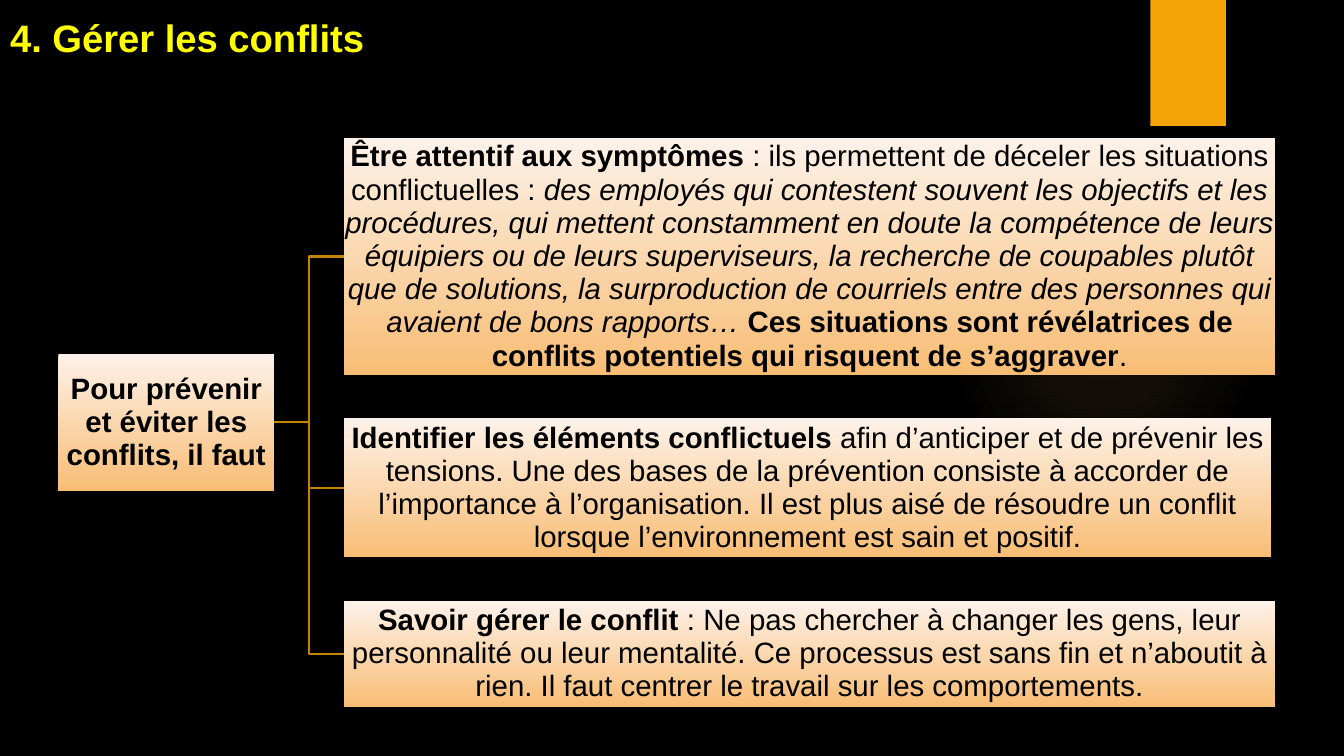
import pptx
import pptx.dml.color
import pptx.enum.shapes
import pptx.enum.text
import pptx.oxml
import pptx.oxml.ns
import pptx.util

RGBColor = pptx.dml.color.RGBColor
Inches = pptx.util.Inches
Pt = pptx.util.Pt
Preset = pptx.enum.shapes.MSO_SHAPE
Align = pptx.enum.text.PP_ALIGN
Anchor = pptx.enum.text.MSO_ANCHOR

BLACK = RGBColor(0x00, 0x00, 0x00)
YELLOW = RGBColor(0xFF, 0xFF, 0x00)
ORANGE = RGBColor(0xF5, 0xA4, 0x08)
LINE = RGBColor(0xC4, 0x83, 0x06)
CREAM = RGBColor(0xFD, 0xF2, 0xE9)
APRICOT = RGBColor(0xF8, 0xBD, 0x75)
GLOW = RGBColor(0xFA, 0xC9, 0x6A)

# Each span is (text, style): "b" bold, "i" italic, "" plain.
TITLE = "4. Gérer les conflits"
ROOT = [("Pour prévenir et éviter les conflits, il faut", "b")]
# (width, height, spans) of each advice, from top to bottom
ADVICE = [
    (9.24, 2.35, [
        ("Être attentif aux symptômes", "b"),
        (" : ils permettent de déceler les situations conflictuelles : ", ""),
        ("des employés qui contestent souvent les objectifs et les procédures, "
         "qui mettent constamment en doute la compétence de leurs équipiers ou "
         "de leurs superviseurs, la recherche de coupables plutôt que de "
         "solutions, la surproduction de courriels entre des personnes qui "
         "avaient de bons rapports… ", "i"),
        ("Ces situations sont révélatrices de conflits potentiels qui risquent "
         "de s’aggraver", "b"),
        (".", ""),
    ]),
    (9.2, 1.38, [
        ("Identifier les éléments conflictuels", "b"),
        (" afin d’anticiper et de prévenir les tensions. Une des bases de la "
         "prévention consiste à accorder de l’importance à l’organisation. Il "
         "est plus aisé de résoudre un conflit lorsque l’environnement est sain "
         "et positif.", ""),
    ]),
    (9.24, 1.05, [
        ("Savoir gérer le conflit ", "b"),
        (": Ne pas chercher à changer les gens, leur personnalité ou leur "
         "mentalité. Ce processus est sans fin et n’aboutit à rien. Il faut "
         "centrer le travail sur les comportements.", ""),
    ]),
]

ROOT_LEFT, ROOT_WIDTH, ROOT_HEIGHT = 0.58, 2.14, 1.36
ADVICE_LEFT, ADVICE_TOP, ADVICE_GAP = 3.41, 1.37, 0.43
GLOW_STOPS = [(0, 7), (36, 6), (69, 0)]  # position and opacity, in percent


def add_shape(page, preset, left, top, width, height):
    shape = page.shapes.add_shape(
        preset, Inches(left), Inches(top), Inches(width), Inches(height))
    shape.shadow.inherit = False
    shape.line.fill.background()
    return shape


def add_glow(page):
    glow = add_shape(page, Preset.OVAL, 9.41, 1.83, 3.08, 3.08)
    glow.fill.background()
    stops = "".join(
        f'<a:gs pos="{place * 1000}"><a:srgbClr val="{GLOW}">'
        f'<a:alpha val="{opacity * 1000}"/></a:srgbClr></a:gs>'
        for place, opacity in GLOW_STOPS)
    gradient = pptx.oxml.parse_xml(
        f'<a:gradFill {pptx.oxml.ns.nsdecls("a")}><a:gsLst>{stops}</a:gsLst>'
        '<a:path path="circle"><a:fillToRect l="50000" t="50000" r="50000" '
        'b="50000"/></a:path></a:gradFill>')
    properties = glow.element.spPr
    properties.replace(properties.find(pptx.oxml.ns.qn("a:noFill")), gradient)


def add_card(page, left, top, width, height, spans):
    card = add_shape(page, Preset.RECTANGLE, left, top, width, height)
    card.fill.gradient()
    card.fill.gradient_angle = 270
    for stop, color in zip(card.fill.gradient_stops, (CREAM, APRICOT)):
        stop.color.rgb = color
    frame = card.text_frame
    frame.word_wrap = True
    frame.vertical_anchor = Anchor.MIDDLE
    frame.margin_left = frame.margin_right = Inches(0.01)
    frame.margin_top = frame.margin_bottom = Inches(0.01)
    para = frame.paragraphs[0]
    para.alignment = Align.CENTER
    para.line_spacing = 0.94
    para.font.name = "Arial"
    para.font.size = Pt(21)
    para.font.color.rgb = BLACK
    for text, style in spans:
        span = para.add_run()
        span.text = text
        span.font.bold = style == "b"
        span.font.italic = style == "i"


def add_branch(page, start_y, end_y):
    """Draw an elbow line from the root card to one advice card."""
    start_x = ROOT_LEFT + ROOT_WIDTH
    middle_x = (start_x + ADVICE_LEFT) / 2
    builder = page.shapes.build_freeform(Inches(start_x), Inches(start_y))
    corners = [(middle_x, start_y), (middle_x, end_y), (ADVICE_LEFT, end_y)]
    builder.add_line_segments(
        [(Inches(x), Inches(y)) for x, y in corners], close=False)
    branch = builder.convert_to_shape()
    branch.shadow.inherit = False
    branch.fill.background()
    branch.line.color.rgb = LINE
    branch.line.width = Pt(1.5)


def format_title(title):
    title.left, title.top = Inches(0), Inches(0.06)
    title.width, title.height = Inches(13.14), Inches(0.59)
    frame = title.text_frame
    frame.text = TITLE
    frame.auto_size = pptx.enum.text.MSO_AUTO_SIZE.NONE
    frame.vertical_anchor = Anchor.BOTTOM
    para = frame.paragraphs[0]
    para.alignment = Align.LEFT
    para.font.name = "Arial"
    para.font.size = Pt(27.3)
    para.font.bold = True
    para.font.color.rgb = YELLOW


def main():
    deck = pptx.Presentation()
    deck.slide_width, deck.slide_height = Inches(13.33), Inches(7.5)
    page = deck.slides.add_slide(deck.slide_layouts.get_by_name("Title Only"))
    page.background.fill.solid()
    page.background.fill.fore_color.rgb = BLACK
    format_title(page.shapes.title)

    add_glow(page)
    band = add_shape(page, Preset.RECTANGLE, 11.41, 0, 0.75, 1.25)
    band.fill.solid()
    band.fill.fore_color.rgb = ORANGE

    tops = []
    bottom = ADVICE_TOP - ADVICE_GAP
    for _, height, _ in ADVICE:
        tops.append(bottom + ADVICE_GAP)
        bottom = tops[-1] + height
    middle = (ADVICE_TOP + bottom) / 2

    for top, (_, height, _) in zip(tops, ADVICE):
        add_branch(page, middle, top + height / 2)
    add_card(page, ROOT_LEFT, middle - ROOT_HEIGHT / 2,
             ROOT_WIDTH, ROOT_HEIGHT, ROOT)
    for top, (width, height, spans) in zip(tops, ADVICE):
        add_card(page, ADVICE_LEFT, top, width, height, spans)

    deck.save("out.pptx")


if __name__ == "__main__":
    main()
